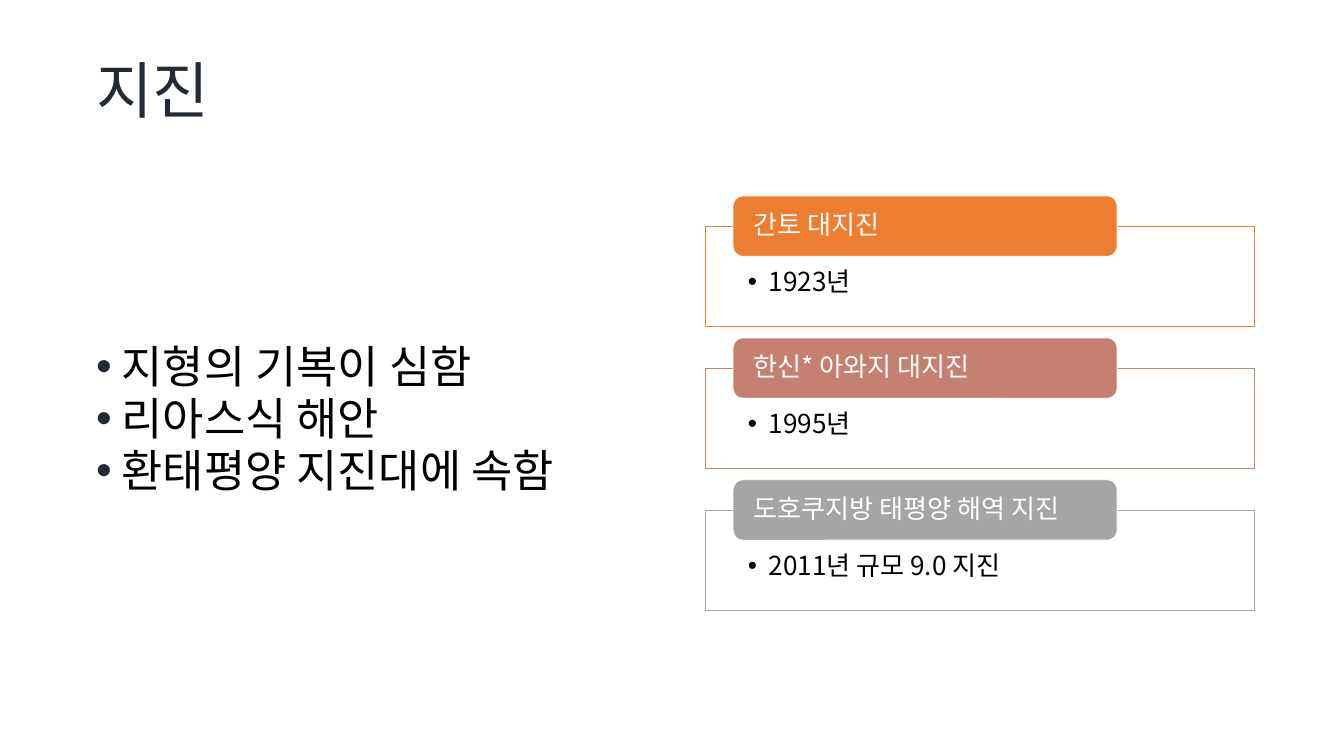
from lxml import etree
from pptx import Presentation
from pptx.dml.color import RGBColor
from pptx.enum.shapes import MSO_SHAPE
from pptx.enum.text import MSO_ANCHOR, PP_ALIGN
from pptx.oxml.ns import qn
from pptx.util import Inches, Pt

RECT, ROUNDED = MSO_SHAPE.RECTANGLE, MSO_SHAPE.ROUNDED_RECTANGLE
TOP, MIDDLE = MSO_ANCHOR.TOP, MSO_ANCHOR.MIDDLE
LEFT = PP_ALIGN.LEFT
FONT = "Noto Sans CJK KR"
COLORS = {
    "title": "222A35",
    "text": "000000",
    "white": "FFFFFF",
    "kanto": "ED7D31",
    "hanshin": "C48170",
    "tohoku": "A5A5A5",
}
CAUSES = ["지형의 기복이 심함", "리아스식 해안", "환태평양 지진대에 속함"]
QUAKES = [
    ("간토 대지진", "1923년", "kanto"),
    ("한신* 아와지 대지진", "1995년", "hanshin"),
    ("도호쿠지방 태평양 해역 지진", "2011년 규모 9.0 지진", "tohoku"),
]


def rgb(name):
    return RGBColor.from_string(COLORS[name])


def write(shape, lines, size, color="text", anchor=TOP, insets=(0.1, 0.05, 0.1, 0.05),
          indent=0, bullet_color=None, after=0):
    frame = shape.text_frame
    frame.word_wrap = True
    frame.vertical_anchor = anchor
    frame.margin_left, frame.margin_top, frame.margin_right, frame.margin_bottom = map(Inches, insets)
    for number, line in enumerate(lines):
        paragraph = frame.add_paragraph() if number else frame.paragraphs[0]
        paragraph.alignment = LEFT
        paragraph.line_spacing = 0.9
        paragraph.space_after = Pt(after)
        run = paragraph.add_run()
        run.text = line
        run.font.name = FONT
        run.font.size = Pt(size)
        run.font.color.rgb = rgb(color)
        etree.SubElement(run.font._element, qn("a:ea"), typeface=FONT)
        if indent:
            properties = paragraph._p.get_or_add_pPr()
            properties.set("marL", str(Inches(indent)))
            properties.set("indent", str(-Inches(indent)))
            if bullet_color:
                tint = etree.SubElement(properties, qn("a:buClr"))
                etree.SubElement(tint, qn("a:srgbClr"), val=COLORS[bullet_color])
            etree.SubElement(properties, qn("a:buFont"), typeface="Arial")
            etree.SubElement(properties, qn("a:buChar"), char="•")


class SlideBuilder:
    def __init__(self, deck):
        self.width, self.height = deck.slide_width, deck.slide_height
        self.slide = deck.slides.add_slide(deck.slide_layouts[6])

    def area(self, left, top, width, height):
        return (int(self.width * left / 100), int(self.height * top / 100),
                int(self.width * width / 100), int(self.height * height / 100))

    def text(self, place, lines, **style):
        write(self.slide.shapes.add_textbox(*self.area(*place)), lines, **style)

    def box(self, kind, place, fill, line, lines, opacity=None, **style):
        box = self.slide.shapes.add_shape(kind, *self.area(*place))
        box.shadow.inherit = False
        box.fill.solid()
        box.fill.fore_color.rgb = rgb(fill)
        box.line.color.rgb = rgb(line)
        box.line.width = Pt(1)
        if opacity:
            tint = box._element.spPr.find(qn("a:solidFill"))[0]
            etree.SubElement(tint, qn("a:alpha"), val=str(opacity * 1000))
        write(box, lines, **style)

    def quake(self, left, top, width, name, detail, color):
        self.box(RECT, (left, top, width, 13.33), "white", color, [detail], opacity=90,
                 size=28, insets=(0.63, 0.64, 0.63, 0.22), indent=0.31)
        self.box(ROUNDED, (left + width * 0.05, top - 4, width * 0.7, 8), color, "white", [name],
                 size=28, color="white", anchor=MIDDLE, insets=(0.26, 0, 0.26, 0))


def main():
    deck = Presentation()
    deck.slide_width, deck.slide_height = Inches(20), Inches(11.25)
    page = SlideBuilder(deck)
    page.text((6.67, 4, 86.67, 16.67), ["지진"], size=66, color="title", anchor=MIDDLE)
    page.text((6.67, 23.33, 40.83, 60), CAUSES, size=48, insets=(0.1, 2.5, 0.1, 0.05),
              indent=0.38, bullet_color="title", after=4)
    for row, (name, detail, color) in enumerate(QUAKES):
        page.quake(52.5, 29.92 + row * 18.77, 40.83, name, detail, color)
    deck.save("out.pptx")


if __name__ == "__main__":
    main()
